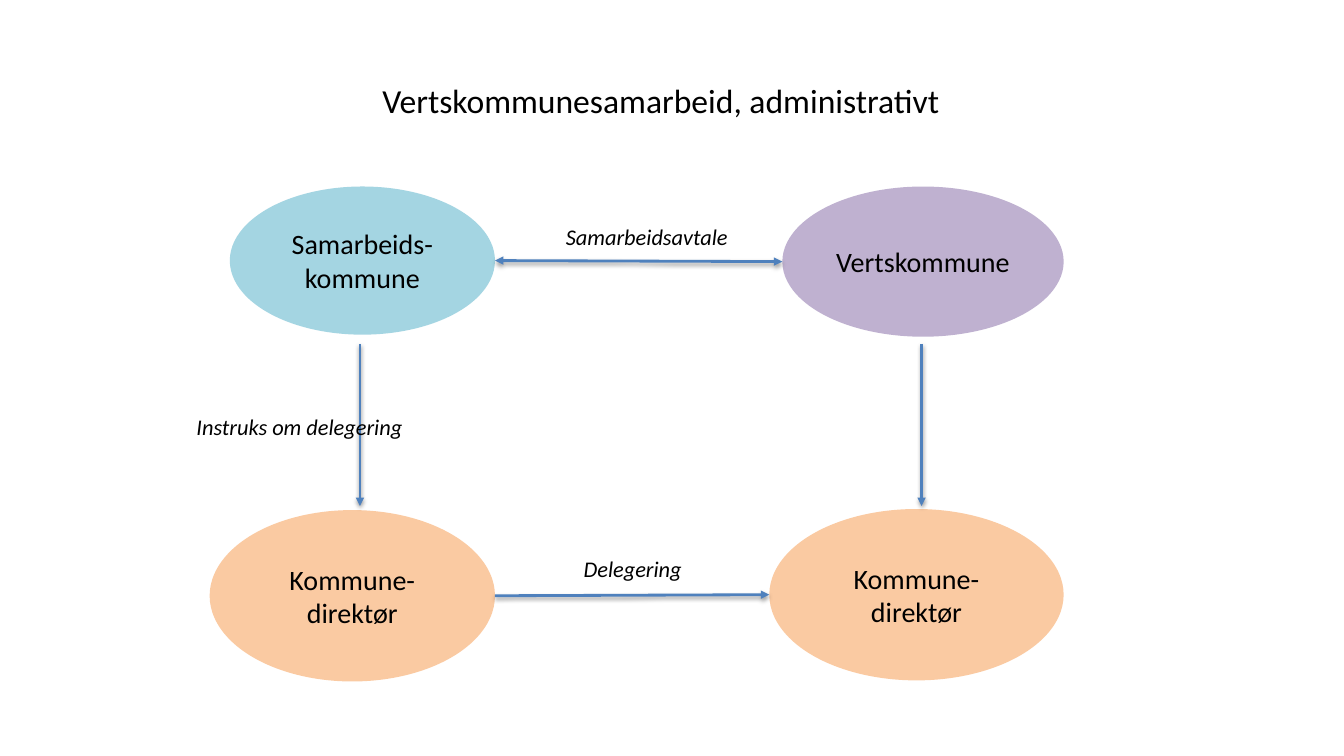
from lxml import etree
from pptx import Presentation
from pptx.dml.color import RGBColor
from pptx.enum import shapes, text
from pptx.oxml import ns
from pptx.util import Inches, Pt

BLACK = RGBColor(0x00, 0x00, 0x00)
TEAL = RGBColor(0x4B, 0xAC, 0xC6)
PURPLE = RGBColor(0x80, 0x64, 0xA2)
ORANGE = RGBColor(0xF7, 0x96, 0x46)
BLUE = RGBColor(0x4F, 0x81, 0xBD)
FONT = "Calibri"
CENTER, LEFT = text.PP_ALIGN.CENTER, text.PP_ALIGN.LEFT

# Content; all lengths are percent of the slide's width or height
TITLE = ("Vertskommunesamarbeid, administrativt", (24.38, 9.87, 49.59, 6.67))
COLUMN_RIGHT = {"left": 36.83, "right": 79.14}
# key: (text, colour, column, top, width, height)
BODIES = {
    "partner": ("Samarbeids-kommune", TEAL, "left", 24.67, 19.73, 19.6),
    "host": ("Vertskommune", PURPLE, "right", 24.67, 20.93, 19.87),
    "host director": ("Kommune-direktør", ORANGE, "right", 67.33, 21.9, 22.67),
    "partner director": ("Kommune-direktør", ORANGE, "left", 67.47, 21.23, 22.67),
}
# (from, to, arrowhead at both ends)
ACROSS = [("partner", "host", True),
          ("partner director", "host director", False)]
DOWN_X = [68.57, 26.78]
DOWN_TOP, DOWN_BOTTOM = 45.47, 66.93
# (text, left, top, width, alignment)
LABELS = [
    ("Samarbeidsavtale", 30.01, 28.8, 36.23, CENTER),
    ("Instruks om delegering", 13.88, 54, 19.35, LEFT),
    ("Delegering", 28.96, 72.8, 36.23, CENTER),
]
LABEL_HEIGHT = 4.93

deck = Presentation()
deck.slide_width, deck.slide_height = Inches(13.33), Inches(7.5)
page = deck.slides.add_slide(deck.slide_layouts[5])


def across(share):
    return round(deck.slide_width * share / 100)


def down(share):
    return round(deck.slide_height * share / 100)


def place(left, top, width, height):
    return across(left), down(top), across(width), down(height)


def add_child(parent, tag, **attributes):
    return etree.SubElement(parent, ns.qn(tag), attributes)


def write(box, words, size, align=CENTER, italic=False,
          anchor=text.MSO_ANCHOR.TOP):
    frame = box.text_frame
    frame.word_wrap = True
    frame.auto_size = text.MSO_AUTO_SIZE.NONE
    frame.vertical_anchor = anchor
    para = frame.paragraphs[0]
    para.alignment = align
    span = para.add_run()
    span.text = words
    span.font.name, span.font.size = FONT, Pt(size)
    span.font.italic, span.font.color.rgb = italic, BLACK


def add_arrow(x1, y1, x2, y2, both_ends=False):
    arrow = page.shapes.add_connector(
        shapes.MSO_CONNECTOR.STRAIGHT, across(x1), down(y1), across(x2), down(y2))
    arrow.line.color.rgb, arrow.line.width = BLUE, Pt(2)
    properties = arrow.element.spPr
    line = properties.find(ns.qn("a:ln"))
    if both_ends:
        add_child(line, "a:headEnd", type="triangle")
    add_child(line, "a:tailEnd", type="triangle")
    # Soft shadow straight below the line
    effects = add_child(properties, "a:effectLst")
    shadow = add_child(effects, "a:outerShdw", blurRad=str(Pt(3.1)),
                       dist=str(Pt(1.6)), dir="5400000", rotWithShape="0")
    color = add_child(shadow, "a:srgbClr", val=str(BLACK))
    add_child(color, "a:alpha", val="38000")


# Title
title_words, title_area = TITLE
title = page.shapes.title
title.left, title.top, title.width, title.height = place(*title_area)
write(title, title_words, 24)

# Half-transparent ellipses, right-aligned in their column
sides = {}
for key, (words, color, column, top, width, height) in BODIES.items():
    right = COLUMN_RIGHT[column]
    ellipse = page.shapes.add_shape(
        shapes.MSO_SHAPE.OVAL, *place(right - width, top, width, height))
    ellipse.shadow.inherit = False
    ellipse.fill.solid()
    ellipse.fill.fore_color.rgb = color
    fill_color = ellipse.element.spPr.find(ns.qn("a:solidFill"))[0]
    add_child(fill_color, "a:alpha", val="50000")
    ellipse.line.fill.background()
    write(ellipse, words, 20, anchor=text.MSO_ANCHOR.MIDDLE)
    sides[key] = (right - width, right, top + height / 2)

# Arrows between the columns, then down each column
for start, end, both_ends in ACROSS:
    _, start_right, start_middle = sides[start]
    end_left, _, end_middle = sides[end]
    add_arrow(start_right, start_middle, end_left, end_middle, both_ends)
for x in DOWN_X:
    add_arrow(x, DOWN_TOP, x, DOWN_BOTTOM)

# Arrow labels
for words, left, top, width, align in LABELS:
    label = page.shapes.add_textbox(*place(left, top, width, LABEL_HEIGHT))
    write(label, words, 16, align=align, italic=True)

deck.save("out.pptx")
